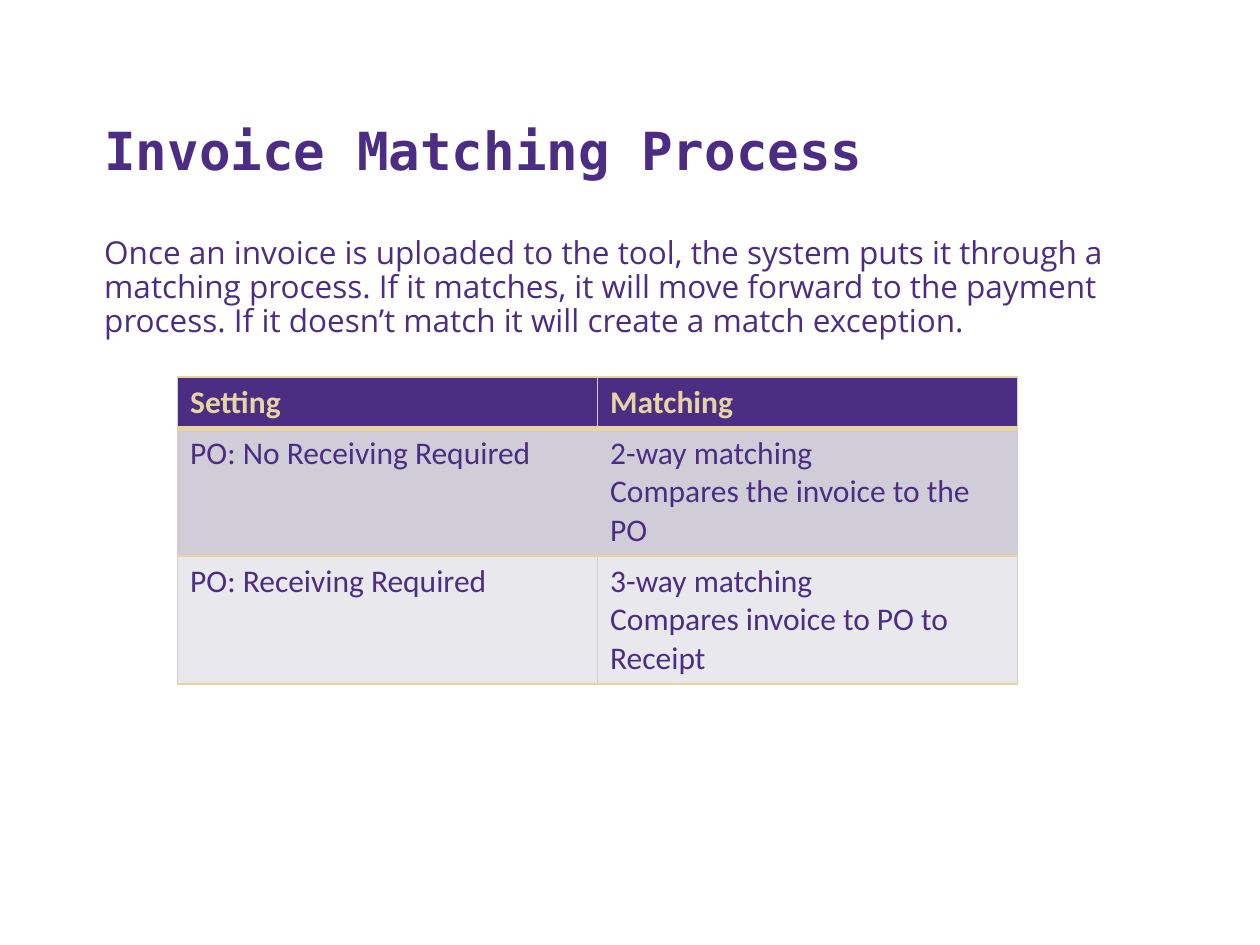
import pptx
import pptx.util
import pptx.dml.color
import pptx.enum.text
from lxml import etree
from pptx.oxml.ns import qn

Pt = pptx.util.Pt
RGBColor = pptx.dml.color.RGBColor
ANCHOR = pptx.enum.text.MSO_ANCHOR

PURPLE = RGBColor(0x4B, 0x2E, 0x83)
GOLD = RGBColor(0xE8, 0xD3, 0xA2)
BAND_DARK = RGBColor(0xD0, 0xCD, 0xD9)
BAND_LIGHT = RGBColor(0xE9, 0xE8, 0xED)

TITLE = "Invoice Matching Process"
INTRO = (
    "Once an invoice is uploaded to the tool, the system puts it through a "
    "matching process. If it matches, it will move forward to the payment "
    "process. If it doesn’t match it will create a match exception."
)
MATCHING_ROWS = [
    ("Setting", "Matching"),
    ("PO: No Receiving Required", "2-way matching\nCompares the invoice to the PO"),
    ("PO: Receiving Required", "3-way matching\nCompares invoice to PO to Receipt"),
]
ROW_HEIGHTS = [29.2, 73.1, 73.1]
ROW_FILLS = [PURPLE, BAND_DARK, BAND_LIGHT]
COLUMN_WIDTH = 240


def style_font(paragraph, name, size, color, bold=False):
    font = paragraph.font
    font.name, font.size, font.bold = name, Pt(size), bold
    font.color.rgb = color


def add_text(slide, box, text, anchor, font_name, size, bold=False):
    frame = slide.shapes.add_textbox(*map(Pt, box)).text_frame
    frame.word_wrap = True
    frame.vertical_anchor = anchor
    frame.text = text
    paragraph = frame.paragraphs[0]
    paragraph.line_spacing = 0.9
    style_font(paragraph, font_name, size, PURPLE, bold)
    return frame


def set_borders(cell, borders):
    """Draw (side, width, colour) borders; they must precede the cell fill."""
    properties = cell._tc.get_or_add_tcPr()
    for side, width, color in borders:
        line = etree.SubElement(properties, qn(f"a:ln{side}"), w=str(Pt(width)))
        fill = etree.SubElement(line, qn("a:solidFill"))
        etree.SubElement(fill, qn("a:srgbClr"), val=str(color))


def add_matching_table(slide):
    row_count, column_count = len(MATCHING_ROWS), len(MATCHING_ROWS[0])
    table = slide.shapes.add_table(
        row_count, column_count, Pt(101.5), Pt(215.5),
        Pt(COLUMN_WIDTH * column_count), Pt(sum(ROW_HEIGHTS)),
    ).table
    for column in table.columns:
        column.width = Pt(COLUMN_WIDTH)
    for r, (texts, height, fill) in enumerate(zip(MATCHING_ROWS, ROW_HEIGHTS, ROW_FILLS)):
        table.rows[r].height = Pt(height)
        header = r == 0
        top_width = 3 if r == 1 else 1
        bottom_width = 3 if header else 1
        for c, text in enumerate(texts):
            cell = table.cell(r, c)
            cell.text = text
            for paragraph in cell.text_frame.paragraphs:
                style_font(paragraph, "Calibri", 18, GOLD if header else PURPLE, header)
            set_borders(cell, [
                ("L", 0.5, BAND_DARK), ("R", 0.5, BAND_DARK),
                ("T", top_width, GOLD), ("B", bottom_width, GOLD),
            ])
            cell.fill.solid()
            cell.fill.fore_color.rgb = fill


def main():
    deck = pptx.Presentation()
    deck.slide_width, deck.slide_height = Pt(720), Pt(540)
    slide = deck.slides.add_slide(deck.slide_layouts[6])
    add_text(slide, (52.5, 29.5, 644.5, 77.8), TITLE, ANCHOR.BOTTOM,
             "DejaVu Sans Mono", 30, bold=True)
    add_matching_table(slide)
    add_text(slide, (52.5, 131.8, 623, 72.7), INTRO, ANCHOR.TOP, "Open Sans", 18)
    deck.save("out.pptx")


if __name__ == "__main__":
    main()
